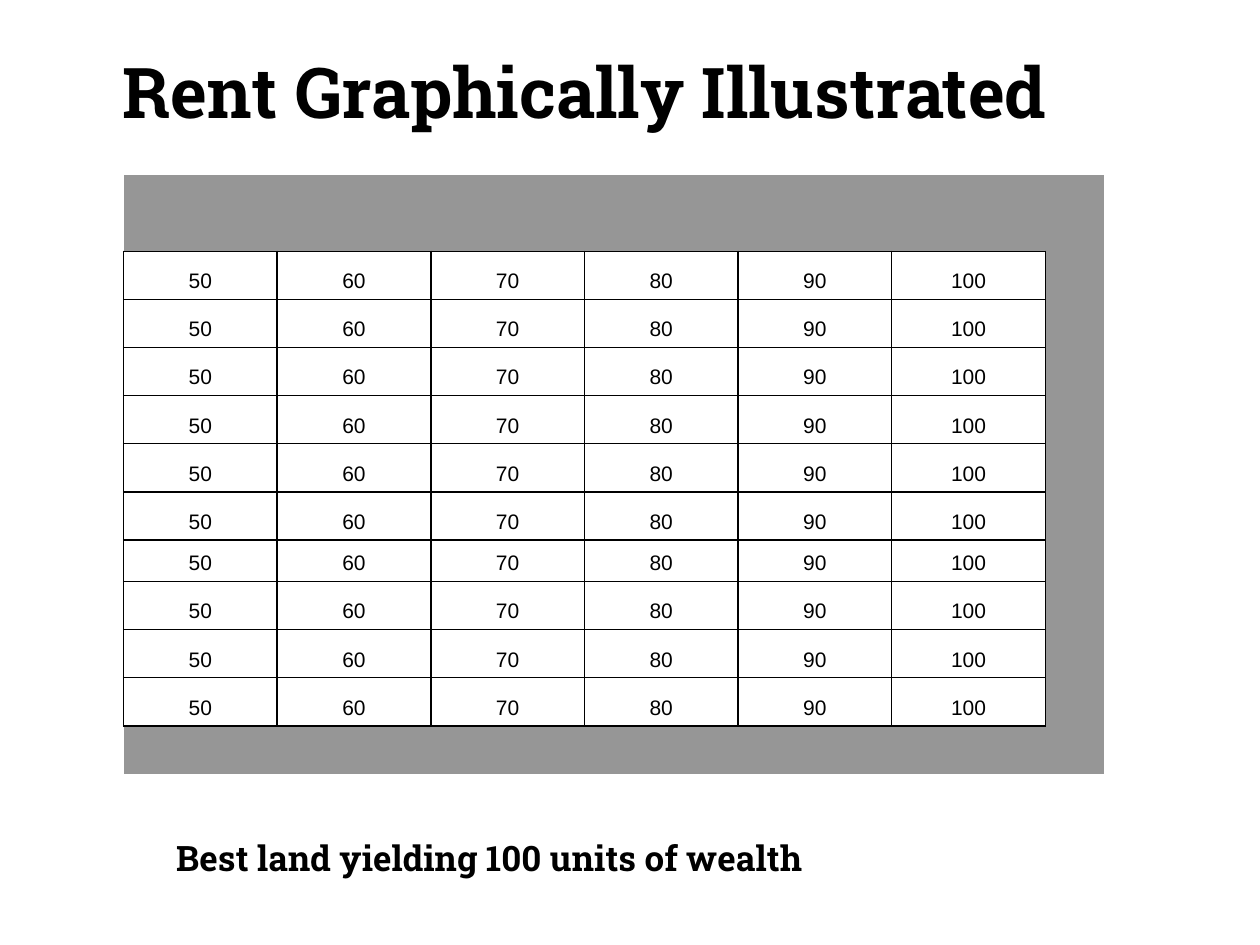
"""Build a slide showing rent as a grid of land yields."""
from dataclasses import dataclass

from lxml import etree
from pptx import Presentation
from pptx import util as u
from pptx.dml.color import RGBColor
from pptx.enum import text
from pptx.oxml import ns


@dataclass(frozen=True)
class Theme:
    """Colours, fonts and type sizes."""
    ink: RGBColor = RGBColor(0, 0, 0)
    gray: RGBColor = RGBColor(0x96, 0x96, 0x96)
    slab: str = "Roboto Slab"
    sans: str = "Arial"
    head: float = 40
    note: float = 20
    cell: float = 12


@dataclass(frozen=True)
class Box:
    """A place on the slide, in points."""
    left: float
    top: float
    wide: float
    high: float

    def fit(self) -> tuple:
        """Return the lengths that shapes take."""
        return tuple(u.Pt(n) for n in (self.left, self.top, self.wide, self.high))


THEME = Theme()
PLAIN = "{2D5ABB26-0587-4C30-8999-92F81FD0307C}"
YIELDS = range(50, 101, 10)
COLS = [87.8] * len(YIELDS) + [33.6]
ROWS = [43.5] + [27.5] * 6 + [23.75] + [27.5] * 4


def write(para, words: str, face: str, size: float, bold: bool = False) -> None:
    """Add one styled run to a paragraph."""
    run = para.add_run()
    run.text = words
    font = run.font
    font.name, font.size, font.bold = face, u.Pt(size), bold
    font.color.rgb = THEME.ink


def edge(cell) -> None:
    """Rule all four sides of a cell."""
    props = cell._tc.get_or_add_tcPr()
    for side in ("lnL", "lnR", "lnT", "lnB"):
        line = etree.SubElement(props, ns.qn(f"a:{side}"), w=str(u.Pt(1)))
        fill = etree.SubElement(line, ns.qn("a:solidFill"))
        etree.SubElement(fill, ns.qn("a:srgbClr"), val=str(THEME.ink))


def shade(cell) -> None:
    """Make a cell part of the gray surround."""
    cell.margin_top = cell.margin_bottom = 0
    cell.fill.solid()
    cell.fill.fore_color.rgb = THEME.gray


def value(cell, num: int) -> None:
    """Put a yield in a ruled cell."""
    edge(cell)
    cell.fill.background()
    cell.vertical_anchor = text.MSO_ANCHOR.BOTTOM
    para = cell.text_frame.paragraphs[0]
    para.alignment = text.PP_ALIGN.CENTER
    props = para._p.get_or_add_pPr()
    props.set("marL", str(u.Pt(27)))
    props.set("indent", str(u.Pt(-27)))
    write(para, str(num), THEME.sans, THEME.cell)


def grid(slide, box: Box) -> None:
    """Draw the table of yields inside its surround."""
    table = slide.shapes.add_table(len(ROWS), len(COLS), *box.fit()).table
    table.first_row = table.horz_banding = False
    table._tbl.tblPr.find(ns.qn("a:tableStyleId")).text = PLAIN
    for col, wide in zip(table.columns, COLS):
        col.width = u.Pt(wide)
    for row, high in zip(table.rows, ROWS):
        row.height = u.Pt(high)
    for r in range(len(ROWS)):
        for c in range(len(COLS)):
            cell = table.cell(r, c)
            if 0 < r < len(ROWS) - 1 and c < len(YIELDS):
                value(cell, YIELDS[c])
            else:
                shade(cell)


def title(slide, words: str, box: Box) -> None:
    """Place and fill the title."""
    shape = slide.shapes.title
    shape.left, shape.top, shape.width, shape.height = box.fit()
    frame = shape.text_frame
    frame.vertical_anchor = text.MSO_ANCHOR.MIDDLE
    para = frame.paragraphs[0]
    para.alignment = text.PP_ALIGN.CENTER
    write(para, words, THEME.slab, THEME.head, True)


def note(slide, words: str, box: Box) -> None:
    """Add the line below the table."""
    frame = slide.shapes.add_textbox(*box.fit()).text_frame
    frame.word_wrap = True
    frame.auto_size = text.MSO_AUTO_SIZE.SHAPE_TO_FIT_TEXT
    write(frame.paragraphs[0], words, THEME.slab, THEME.note, True)


def main() -> None:
    """Build and save the slide."""
    deck = Presentation()
    deck.slide_width, deck.slide_height = u.Pt(720), u.Pt(540)
    slide = deck.slides.add_slide(deck.slide_layouts[5])
    title(slide, "Rent Graphically Illustrated", Box(19.4, 20.2, 629.3, 62.6))
    grid(slide, Box(70.6, 100.1, sum(COLS), sum(ROWS)))
    note(slide, "Best land yielding 100 units of wealth", Box(93.6, 474.5, 402.5, 31))
    deck.save("out.pptx")


if __name__ == "__main__":
    main()
